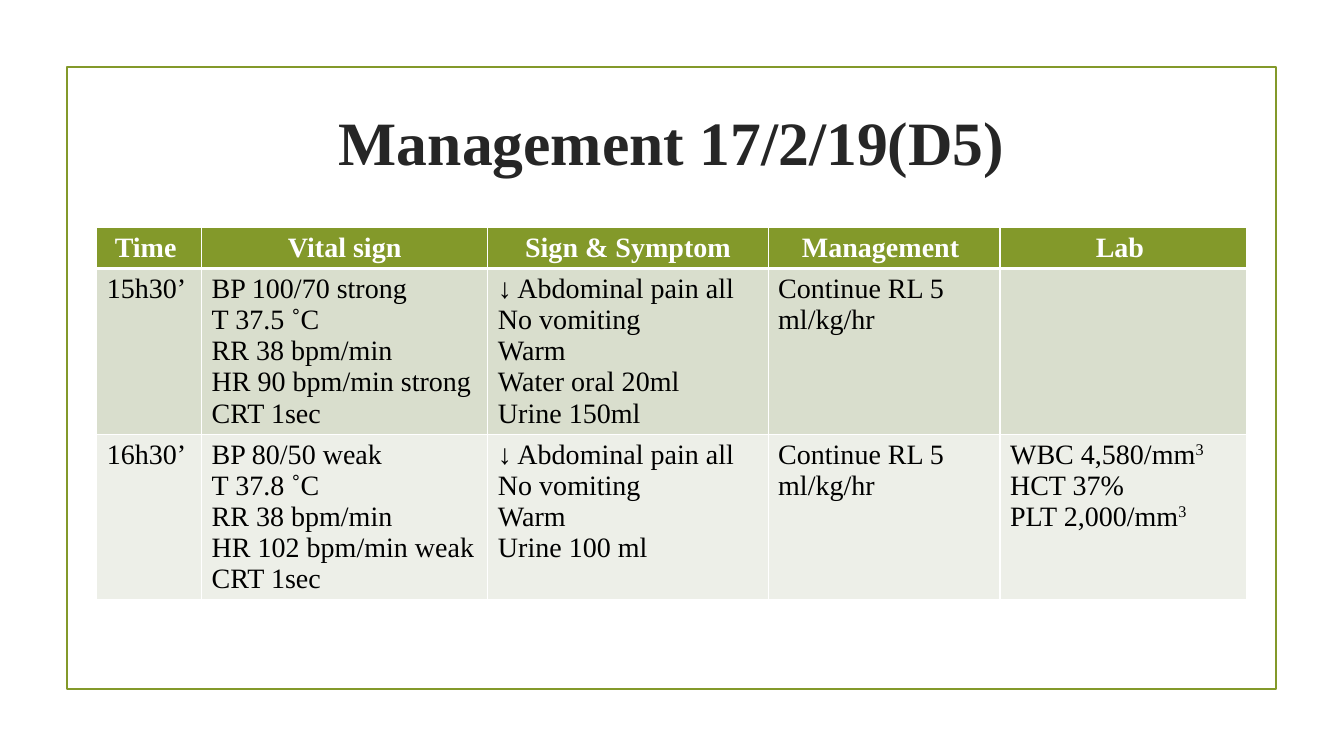
import pptx
import pptx.util
import pptx.enum.text
import pptx.enum.shapes
import pptx.dml.color
import pptx.oxml

Pt = pptx.util.Pt
ALIGN = pptx.enum.text.PP_ALIGN
COLORS = {"green": "83992A", "dark": "262626", "white": "FFFFFF",
          "black": "000000", "band": "D9DECD", "pale": "EDEFE8"}
NS = "http://schemas.openxmlformats.org/drawingml/2006/main"


def rgb(name):
    return pptx.dml.color.RGBColor.from_string(COLORS[name])


def style(font, color, size, bold):
    look = {"name": "Times New Roman", "size": Pt(size), "bold": bold}
    for key, value in look.items():
        setattr(font, key, value)
    font.color.rgb = rgb(color)


deck = pptx.Presentation()
deck.slide_width, deck.slide_height = Pt(960), Pt(540)
slide = deck.slides.add_slide(deck.slide_layouts[5])

# Frame
frame = slide.shapes.add_shape(pptx.enum.shapes.MSO_SHAPE.RECTANGLE,
                               Pt(47.7), Pt(48), Pt(864), Pt(444))
frame.shadow.inherit = False
frame.fill.background()
frame.line.color.rgb = rgb("green")
frame.line.width = Pt(1.25)

# Title
title = slide.shapes.title
place = {"left": 102, "top": 49, "width": 756, "height": 103}
for key, value in place.items():
    setattr(title, key, Pt(value))
title.text_frame.vertical_anchor = pptx.enum.text.MSO_ANCHOR.MIDDLE
head = title.text_frame.paragraphs[0]
head.text = "Management 17/2/19(D5)"
head.alignment = ALIGN.CENTER
style(head.runs[0].font, "dark", 44, True)

# Table text: a list of lines per cell, with ^ before a superscript
rows = [
    [["Time "], ["Vital sign"], ["Sign & Symptom"], ["Management "], ["Lab "]],
    [["15h30’"],
     ["BP 100/70 strong", "T 37.5 ˚C", "RR 38 bpm/min",
      "HR 90 bpm/min strong", "CRT 1sec"],
     ["↓ Abdominal pain all", "No vomiting", "Warm",
      "Water oral 20ml", "Urine 150ml"],
     ["Continue RL 5 ml/kg/hr"],
     []],
    [["16h30’"],
     ["BP 80/50 weak", "T 37.8 ˚C", "RR 38 bpm/min",
      "HR 102 bpm/min weak", "CRT 1sec"],
     ["↓ Abdominal pain all", "No vomiting", "Warm", "Urine 100 ml"],
     ["Continue RL 5 ml/kg/hr"],
     ["WBC 4,580/mm^3", "HCT 37%", "PLT 2,000/mm^3"]],
]
widths = [74.9, 204.5, 200.2, 165.6, 176.4]
heights = [29.5, 118, 118]
fills = ["green", "band", "pale"]

# Table
table = slide.shapes.add_table(3, 5, Pt(69.1), Pt(162.4),
                               Pt(sum(widths)), Pt(sum(heights))).table
for col, width in zip(table.columns, widths):
    col.width = Pt(width)
for r, row in enumerate(rows):
    table.rows[r].height = Pt(heights[r])
    top = r == 0
    for c, lines in enumerate(row):
        cell = table.cell(r, c)
        # Borders, thicker under the header
        props = cell._tc.get_or_add_tcPr()
        for side in "LRTB":
            thick = (top and side == "B") or (r == 1 and side == "T")
            props.append(pptx.oxml.parse_xml(
                f'<a:ln{side} xmlns:a="{NS}" w="{Pt(3 if thick else 1)}">'
                f'<a:solidFill><a:srgbClr val="{COLORS["white"]}"/>'
                f'</a:solidFill></a:ln{side}>'))
        cell.fill.solid()
        cell.fill.fore_color.rgb = rgb(fills[r])
        # Text
        for n, line in enumerate(lines):
            frame = cell.text_frame
            para = frame.add_paragraph() if n else frame.paragraphs[0]
            para.alignment = ALIGN.CENTER if top else ALIGN.LEFT
            for i, part in enumerate(line.split("^")):
                run = para.add_run()
                run.text = part
                style(run.font, "white" if top else "black", 20, top)
                if i:
                    run.font._element.set("baseline", "30000")

deck.save("out.pptx")
